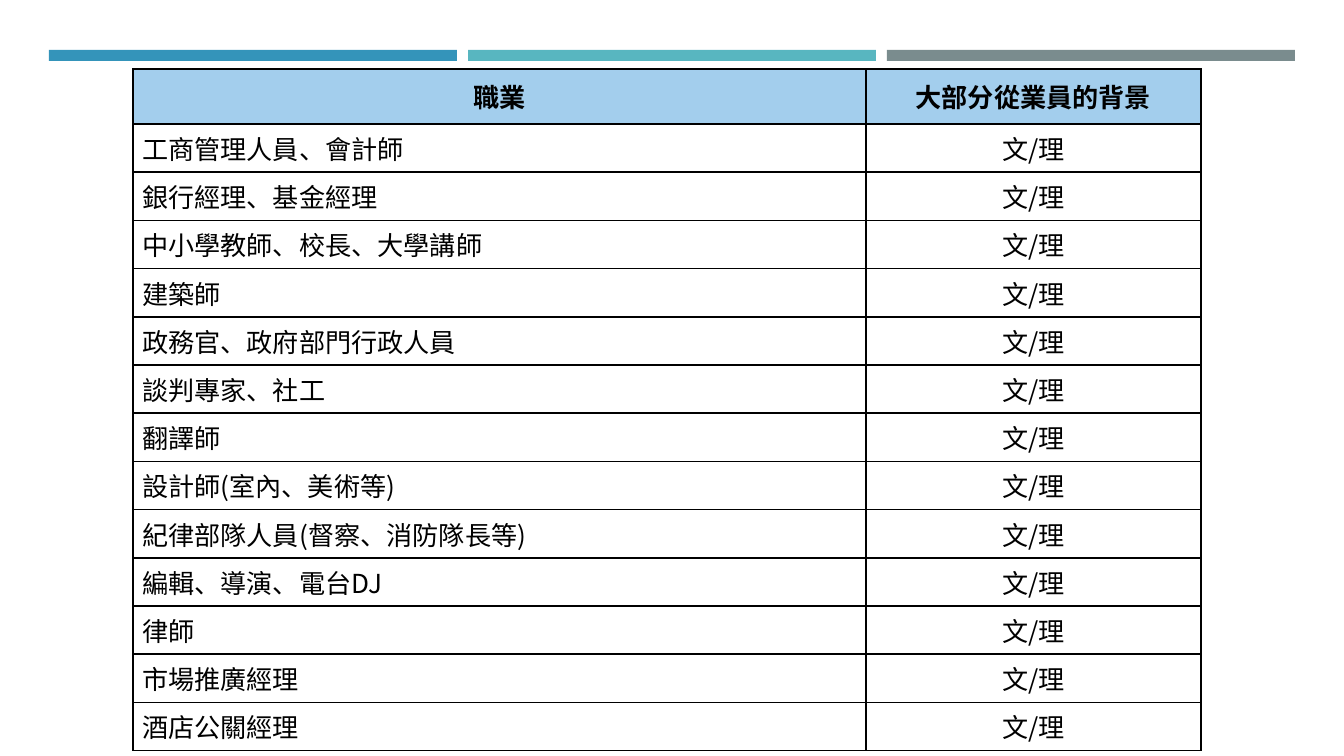
"""Build a slide with a table of occupations and the usual background of their members."""
from lxml.etree import SubElement
from pptx import Presentation
from pptx.dml.color import RGBColor
from pptx.enum.shapes import MSO_SHAPE
from pptx.enum.text import MSO_ANCHOR, PP_ALIGN
from pptx.oxml.ns import qn
from pptx.util import Inches, Pt

HEADINGS = ("職業", "大部分從業員的背景")
OCCUPATIONS = [
    "工商管理人員、會計師",
    "銀行經理、基金經理",
    "中小學教師、校長、大學講師",
    "建築師",
    "政務官、政府部門行政人員",
    "談判專家、社工",
    "翻譯師",
    "設計師(室內、美術等)",
    "紀律部隊人員(督察、消防隊長等)",
    "編輯、導演、電台DJ",
    "律師",
    "市場推廣經理",
    "酒店公關經理",
]
BACKGROUND = "文/理"

FONT = "Noto Sans CJK SC"
BLACK = RGBColor(0x00, 0x00, 0x00)
WHITE = RGBColor(0xFF, 0xFF, 0xFF)
HEADER_BLUE = RGBColor(0xA3, 0xCE, 0xED)
BAR_COLORS = (
    RGBColor(0x34, 0x94, 0xBA),
    RGBColor(0x58, 0xB6, 0xC0),
    RGBColor(0x7A, 0x8C, 0x8E),
)

PAGE_WIDTH, PAGE_HEIGHT = 1344, 756
BAR_LEFT, BAR_TOP, BAR_WIDTH, BAR_HEIGHT, BAR_STEP = 49, 50, 408, 11, 419
TABLE_LEFT, TABLE_TOP = 133, 69
COLUMN_WIDTHS = (733, 335)
HEADER_HEIGHT, BODY_HEIGHT = 55, 627
MARGINS = {"margin_left": 9, "margin_right": 9, "margin_top": 5, "margin_bottom": 5}


def px(length):
    """Turn pixels into EMU."""
    return round(length * Inches(1) / 134.4)


def add_bar(page, index, color):
    """Add one coloured bar of the top band."""
    bar = page.shapes.add_shape(
        MSO_SHAPE.RECTANGLE,
        px(BAR_LEFT + index * BAR_STEP), px(BAR_TOP), px(BAR_WIDTH), px(BAR_HEIGHT),
    )
    bar.shadow.inherit = False
    bar.fill.solid()
    bar.fill.fore_color.rgb = color
    bar.line.fill.background()


def add_borders(cell):
    """Draw a thin black line on each side of a cell."""
    properties = cell._tc.get_or_add_tcPr()
    for position, side in enumerate(("a:lnL", "a:lnR", "a:lnT", "a:lnB")):
        line = properties.makeelement(qn(side), {"w": str(Pt(1))})
        fill = SubElement(line, qn("a:solidFill"))
        SubElement(fill, qn("a:srgbClr"), val=str(BLACK))
        properties.insert(position, line)


def fill_cell(cell, text, is_header, is_centered):
    """Write and format one cell."""
    for name, margin in MARGINS.items():
        setattr(cell, name, px(margin))
    cell.vertical_anchor = MSO_ANCHOR.MIDDLE if is_header else MSO_ANCHOR.TOP
    cell.fill.solid()
    cell.fill.fore_color.rgb = HEADER_BLUE if is_header else WHITE
    add_borders(cell)
    paragraph = cell.text_frame.paragraphs[0]
    paragraph.alignment = PP_ALIGN.CENTER if is_centered else PP_ALIGN.LEFT
    span = paragraph.add_run()
    span.text = text
    for name, value in {"name": FONT, "size": Pt(14), "bold": is_header}.items():
        setattr(span.font, name, value)
    span.font.color.rgb = BLACK
    SubElement(span._r.get_or_add_rPr(), qn("a:ea"), typeface=FONT)


def add_occupation_table(page):
    """Add the table with its heading row and one row per occupation."""
    rows = [HEADINGS] + [(occupation, BACKGROUND) for occupation in OCCUPATIONS]
    table = page.shapes.add_table(
        len(rows), len(HEADINGS), px(TABLE_LEFT), px(TABLE_TOP),
        px(sum(COLUMN_WIDTHS)), px(HEADER_HEIGHT + BODY_HEIGHT),
    ).table
    for column, width in zip(table.columns, COLUMN_WIDTHS):
        column.width = px(width)
    for row_index, texts in enumerate(rows):
        is_header = row_index == 0
        height = HEADER_HEIGHT if is_header else BODY_HEIGHT / len(OCCUPATIONS)
        table.rows[row_index].height = px(height)
        for column_index, text in enumerate(texts):
            cell = table.cell(row_index, column_index)
            fill_cell(cell, text, is_header, is_header or column_index == 1)


def main():
    """Build and save the deck."""
    deck = Presentation()
    deck.slide_width, deck.slide_height = px(PAGE_WIDTH), px(PAGE_HEIGHT)
    page = deck.slides.add_slide(deck.slide_layouts[6])
    for index, color in enumerate(BAR_COLORS):
        add_bar(page, index, color)
    add_occupation_table(page)
    deck.save("out.pptx")


if __name__ == "__main__":
    main()
